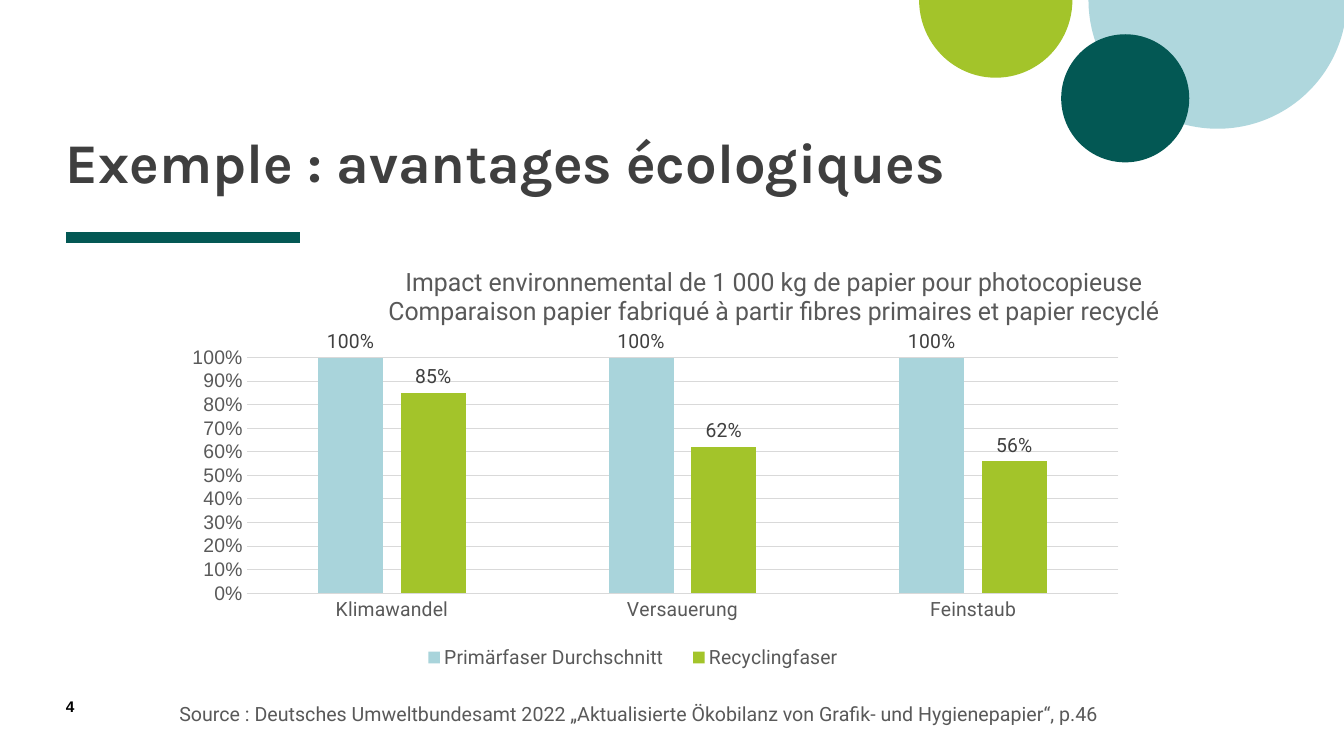
from lxml.etree import SubElement
from pptx import Presentation
from pptx.chart.data import CategoryChartData as Data
from pptx.dml.color import RGBColor
from pptx.enum.chart import XL_CHART_TYPE as Kind, XL_LABEL_POSITION as Spot
from pptx.enum.chart import XL_LEGEND_POSITION as Side, XL_TICK_MARK as Tick
from pptx.enum.shapes import MSO_CONNECTOR as Link, MSO_SHAPE as Form
from pptx.enum.text import MSO_ANCHOR as Anchor, MSO_AUTO_SIZE as Fit, PP_ALIGN as Align
from pptx.oxml import parse_xml
from pptx.oxml.ns import qn
from pptx.util import Pt

BLACK = RGBColor(0, 0, 0)
DARK = RGBColor(0x3F, 0x3F, 0x3F)
LABEL = RGBColor(0x40, 0x40, 0x40)
GREY = RGBColor(0x59, 0x59, 0x59)
RULE = RGBColor(0xD9, 0xD9, 0xD9)
PINE = RGBColor(0x03, 0x58, 0x54)
LIME = RGBColor(0xA3, 0xC4, 0x2A)
PALE = RGBColor(0xAF, 0xD7, 0xDD)
SKY = RGBColor(0xA9, 0xD4, 0xDB)
HEAD, BODY, PLAIN = "Karla", "Roboto", "Arial"
C_NS = "http://schemas.openxmlformats.org/drawingml/2006/chart"


class Page:
    def __init__(self, deck):
        self.slide = deck.slides.add_slide(deck.slide_layouts[5])
        self.shapes = self.slide.shapes

    def style(self, font, size, color, face=BODY, bold=False):
        font.name, font.size, font.bold = face, Pt(size), bold
        font.color.rgb = color

    def put(self, para, text, size, color, face=BODY, bold=False):
        run = para.add_run()
        run.text = text
        self.style(run.font, size, color, face, bold)

    def inset(self, frame, x, y):
        frame.margin_left = frame.margin_right = Pt(x)
        frame.margin_top = frame.margin_bottom = Pt(y)
        frame.word_wrap = True

    def title(self, box, text):
        head = self.shapes.title
        head.left, head.top, head.width, head.height = map(Pt, box)
        frame = head.text_frame
        self.inset(frame, 0, 0)
        frame.auto_size = Fit.NONE
        frame.vertical_anchor = Anchor.BOTTOM
        para = frame.paragraphs[0]
        para.alignment = Align.LEFT
        para.line_spacing = 0.8
        self.put(para, text, 40, DARK, HEAD, True)

    def text(self, box, text, size, color, face=BODY, bold=False, pad=(0, 0)):
        frame = self.shapes.add_textbox(*map(Pt, box)).text_frame
        self.inset(frame, *pad)
        self.put(frame.paragraphs[0], text, size, color, face, bold)

    def shape(self, form, box, color, turn=()):
        item = self.shapes.add_shape(form, *map(Pt, box))
        item.shadow.inherit = False
        item.fill.solid()
        item.fill.fore_color.rgb = color
        item.line.fill.background()
        for i, value in enumerate(turn):
            item.adjustments[i] = value

    def line(self, ends, color, width):
        item = self.shapes.add_connector(Link.STRAIGHT, *map(Pt, ends))
        item.line.color.rgb = color
        item.line.width = Pt(width)
        SubElement(item._element.spPr, qn("a:effectLst"))

    def place(self, node, index, *box, inner=False):
        for old in node.findall(qn("c:layout")):
            node.remove(old)
        tags = ['<c:layoutTarget val="inner"/>'] if inner else []
        tags += [f'<c:{k}Mode val="edge"/>' for k in "xy"]
        tags += [f'<c:{k} val="{v}"/>' for k, v in zip("xywh", box)]
        node.insert(index, parse_xml(
            f'<c:layout xmlns:c="{C_NS}"><c:manualLayout>'
            f'{"".join(tags)}</c:manualLayout></c:layout>'))

    def chart(self, box, lines, cats, rows):
        data = Data(number_format="0%")
        data.categories = cats
        for name, values, _ in rows:
            data.add_series(name, values)
        chart = self.shapes.add_chart(
            Kind.COLUMN_CLUSTERED, *map(Pt, box), data).chart
        self.style(chart.font, 10, BLACK, PLAIN)

        frame = chart.chart_title.text_frame
        for i, text in enumerate(lines):
            para = frame.add_paragraph() if i else frame.paragraphs[0]
            self.put(para, text, 18, GREY)
        chart.chart_title.include_in_layout = False
        self.place(chart.chart_title._element, 1, 0.23, 0.02)

        plot = chart.plots[0]
        plot.vary_by_categories = False
        plot.gap_width, plot.overlap = 219, -27
        for series, (_, _, color) in zip(plot.series, rows):
            series.format.fill.solid()
            series.format.fill.fore_color.rgb = color
            labels = series.data_labels
            labels.show_value = True
            labels.position = Spot.OUTSIDE_END
            labels.number_format = "0%"
            labels.number_format_is_linked = False
            self.style(labels.font, 14, LABEL)
        area = chart._chartSpace.chart.plotArea
        self.place(area, 0, 0.09, 0.24, 0.88, 0.55, inner=True)

        self.axes(chart)
        chart.has_legend = True
        key = chart.legend
        key.position = Side.BOTTOM
        key.include_in_layout = False
        self.style(key.font, 14, GREY)
        self.place(key._element, 1, 0.25, 0.9, 0.46, 0.08)

    def axes(self, chart):
        cat, val = chart.category_axis, chart.value_axis
        for axis, face in ((cat, BODY), (val, PLAIN)):
            axis.major_tick_mark = axis.minor_tick_mark = Tick.NONE
            self.style(axis.tick_labels.font, 14, GREY, face)
        val.minimum_scale, val.maximum_scale, val.major_unit = 0, 1, 0.1
        val.tick_labels.number_format = "0%"
        val.tick_labels.number_format_is_linked = False
        val.format.line.fill.background()
        for line in (cat.format.line, val.major_gridlines.format.line):
            line.color.rgb = RULE
            line.width = Pt(0.75)


def main():
    deck = Presentation()
    deck.slide_width, deck.slide_height = Pt(960), Pt(540)
    page = Page(deck)
    page.line((47, 169.5, 214.5, 169.5), PINE, 8)
    page.shape(Form.PIE, (777.5, -92, 184.5, 184), PALE, (0, 108))
    page.shape(Form.PIE, (656.5, -55.5, 109.5, 111), LIME, (0, 108))
    page.shape(Form.OVAL, (758, 24.5, 91.5, 91.5), PINE)
    page.title((47, 21.5, 770, 117.5), "Exemple : avantages écologiques")
    page.text((47, 498, 41, 19.5), "4", 11, BLACK, PLAIN, True)
    page.chart(
        (112.5, 182, 718, 306),
        ("Impact environnemental de 1 000 kg de papier pour photocopieuse",
         "Comparaison papier fabriqué à partir fibres primaires et papier recyclé"),
        ("Klimawandel", "Versauerung", "Feinstaub"),
        (("Primärfaser Durchschnitt", (1, 1, 1), SKY),
         ("Recyclingfaser", (0.85, 0.62, 0.56), LIME)))
    page.text(
        (121, 497.5, 678, 41),
        "Source : Deutsches Umweltbundesamt 2022 „Aktualisierte Ökobilanz "
        "von Grafik- und Hygienepapier“, p.46",
        14, GREY, pad=(7.2, 3.6))
    deck.save("out.pptx")


if __name__ == "__main__":
    main()
